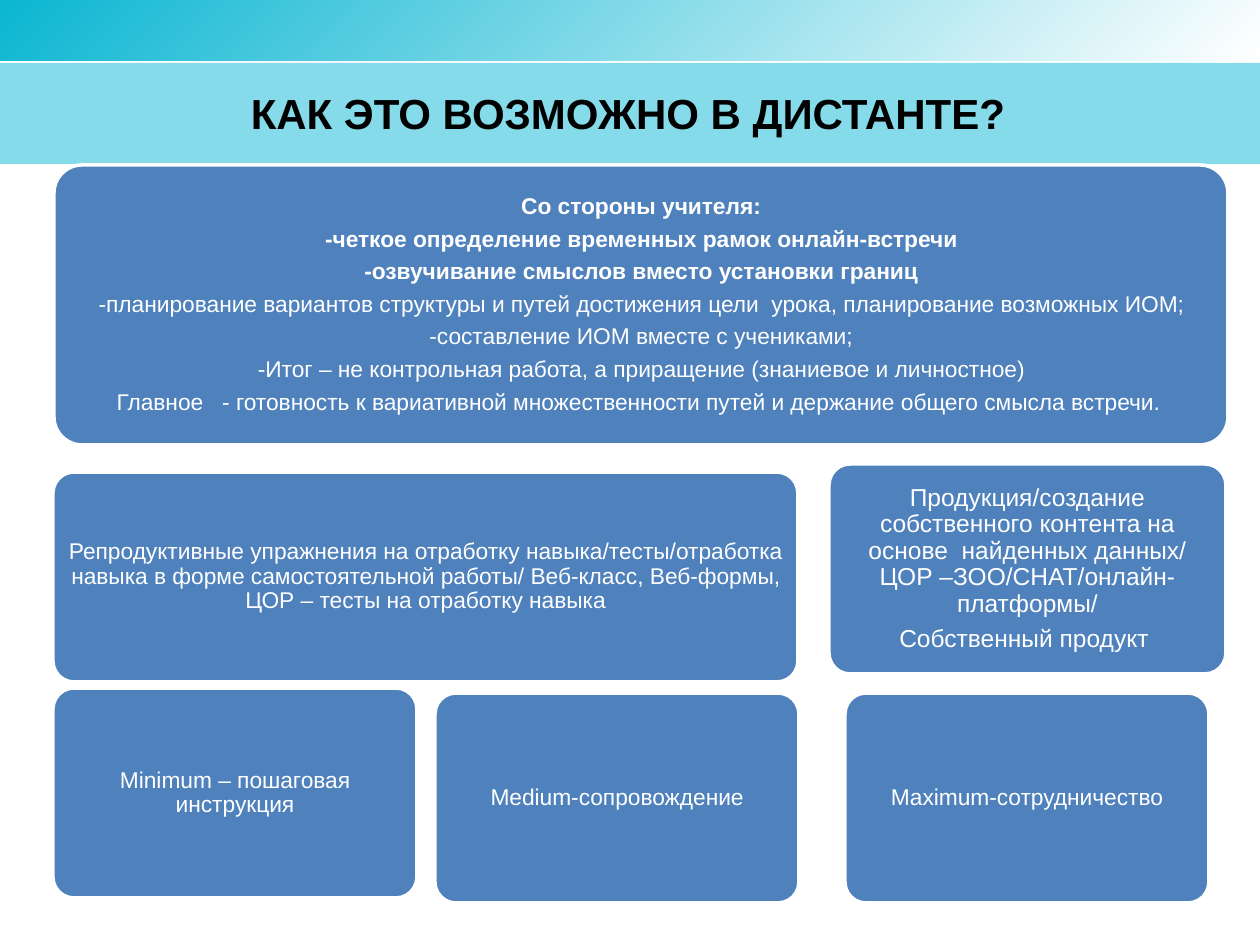
from pptx import Presentation
from pptx.dml.color import RGBColor
from pptx.enum import shapes, text
from pptx.util import Emu, Pt

PX = 914400 // 126
WHITE = RGBColor(0xFF, 0xFF, 0xFF)
BLACK = RGBColor(0x00, 0x00, 0x00)
BLUE = RGBColor(0x4F, 0x81, 0xBD)
TEAL = RGBColor(0x0B, 0xB6, 0xD2)
AQUA = RGBColor(0x85, 0xDB, 0xE9)

CARD_HEIGHT = 210
LEVEL_WIDTH = 364

TEACHER_LINES = [
    "Со стороны учителя:",
    "-четкое определение временных рамок онлайн-встречи",
    "-озвучивание смыслов вместо установки границ",
    "-планирование вариантов структуры и путей достижения цели  урока, планирование возможных ИОМ;",
    "-составление ИОМ вместе с учениками;",
    "-Итог – не контрольная работа, а приращение (знаниевое и личностное)",
    "Главное   - готовность к вариативной множественности путей и держание общего смысла встречи. ",
]
PRACTICE_LINES = [
    "Репродуктивные упражнения на отработку навыка/тесты/отработка навыка в форме "
    "самостоятельной работы/ Веб-класс, Веб-формы, ЦОР – тесты на отработку навыка",
]
PRODUCT_LINES = [
    "Продукция/создание собственного контента на основе  найденных данных/ "
    "ЦОР –ЗОО/CHAT/онлайн-платформы/",
    "Собственный продукт ",
]
LEVELS = [
    (53, 688, "Minimum – пошаговая инструкция"),
    (435, 693, "Medium-сопровождение"),
    (845, 693, "Maximum-сотрудничество"),
]


class SlideBuilder:
    font = "Arial"
    line_spacing = 0.9

    def __init__(self, page):
        self.page = page

    def shape(self, kind, left, top, width, height):
        box = self.page.shapes.add_shape(
            kind, *(Emu(n * PX) for n in (left, top, width, height)))
        box.shadow.inherit = False
        return box

    def band(self, top, height, color, end_color=None):
        """Full-width strip, fading diagonally when end_color is given."""
        box = self.shape(shapes.MSO_SHAPE.RECTANGLE, 0, top, 1260, height)
        box.line.fill.background()
        if end_color is None:
            box.fill.solid()
            box.fill.fore_color.rgb = color
            return
        box.fill.gradient()
        box.fill.gradient_angle = 315
        for stop, rgb in zip(box.fill.gradient_stops, (color, end_color)):
            stop.color.rgb = rgb
        box.fill.gradient_stops[0].position = 0
        box.fill.gradient_stops[1].position = 1

    def fill_text(self, box, lines, size, color, bold_count=0, gap=0.0):
        """Fill box with centred lines; the first bold_count are bold."""
        frame = box.text_frame
        frame.word_wrap = True
        frame.vertical_anchor = text.MSO_ANCHOR.MIDDLE
        frame.text = "\n".join(lines)
        for index, para in enumerate(frame.paragraphs):
            para.alignment = text.PP_ALIGN.CENTER
            para.line_spacing = self.line_spacing
            para.space_after = Pt(size * gap)
            for span in para.runs:
                span.font.name = self.font
                span.font.size = Pt(size)
                span.font.bold = index < bold_count
                span.font.color.rgb = color

    def title(self, left, top, width, height, line):
        box = self.page.shapes.add_textbox(
            *(Emu(n * PX) for n in (left, top, width, height)))
        self.fill_text(box, [line], 24, BLACK, bold_count=1)

    def card(self, left, top, width, height, lines, size=13, bold_count=0):
        box = self.shape(shapes.MSO_SHAPE.ROUNDED_RECTANGLE, left, top, width, height)
        box.adjustments[0] = 0.1
        box.fill.solid()
        box.fill.fore_color.rgb = BLUE
        box.line.color.rgb = WHITE
        box.line.width = Pt(2)
        frame = box.text_frame
        frame.margin_left = frame.margin_right = Emu(6 * PX)
        frame.margin_top = frame.margin_bottom = Emu(6 * PX)
        self.fill_text(box, lines, size, WHITE, bold_count, gap=0.35)


def main():
    deck = Presentation()
    deck.slide_width = Emu(1260 * PX)
    deck.slide_height = Emu(945 * PX)
    builder = SlideBuilder(deck.slides.add_slide(deck.slide_layouts[6]))

    builder.band(-2, 63, TEAL, WHITE)
    builder.band(63, 101, AQUA)
    builder.title(111, 66, 1034, 100, "КАК ЭТО ВОЗМОЖНО В ДИСТАНТЕ?")

    builder.card(54, 165, 1174, 280, TEACHER_LINES, bold_count=3)
    builder.card(53, 472, 745, CARD_HEIGHT, PRACTICE_LINES)
    builder.card(829, 464, 397, CARD_HEIGHT, PRODUCT_LINES, size=14)
    for left, top, line in LEVELS:
        builder.card(left, top, LEVEL_WIDTH, CARD_HEIGHT, [line])

    deck.save("out.pptx")


if __name__ == "__main__":
    main()
